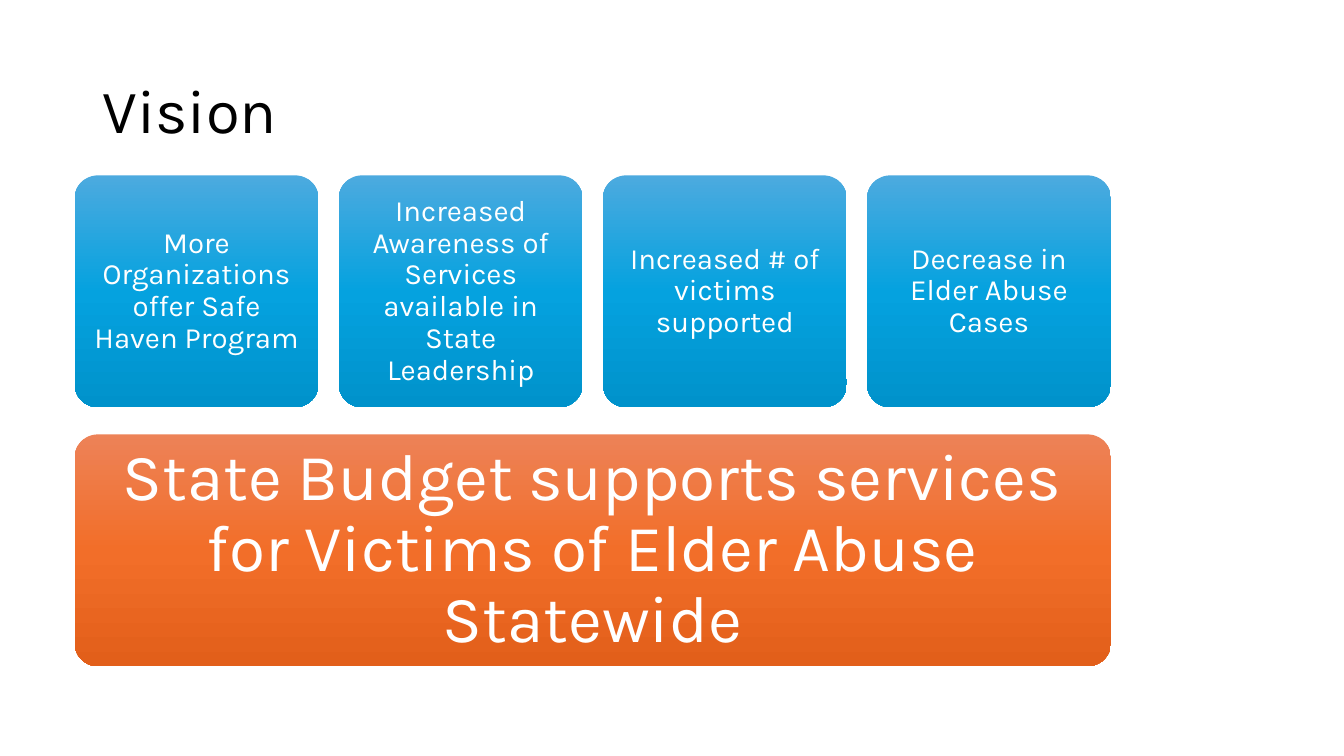
from copy import deepcopy

from pptx import Presentation
from pptx.dml.color import RGBColor
from pptx.enum.shapes import MSO_SHAPE as Shape
from pptx.enum.text import MSO_ANCHOR as Anchor, MSO_AUTO_SIZE as AutoSize, PP_ALIGN as Align
from pptx.util import Pt

BLACK = RGBColor(0x00, 0x00, 0x00)
WHITE = RGBColor(0xFF, 0xFF, 0xFF)
BLUES = (RGBColor(0x4C, 0xAA, 0xDF), RGBColor(0x05, 0xA2, 0xDF), RGBColor(0x00, 0x92, 0xCB))
ORANGES = (RGBColor(0xED, 0x82, 0x57), RGBColor(0xF2, 0x6E, 0x29), RGBColor(0xE2, 0x5F, 0x1A))

FONT = "Karla"
LEFT, WIDTH = 53.3, 740.2
GOAL_TOP, BUDGET_TOP = 125.3, 310.3
CARD_HEIGHT, GOAL_WIDTH = 165.6, 174.2

GOALS = (
    "More Organizations offer Safe Haven Program",
    "Increased Awareness of Services available in State Leadership",
    "Increased # of victims supported",
    "Decrease in Elder Abuse Cases",
)
BUDGET = "State Budget supports services for Victims of Elder Abuse Statewide"


def write(frame, text, size, color, align):
    frame.text = text
    frame.word_wrap = True
    frame.auto_size = AutoSize.NONE
    frame.vertical_anchor = Anchor.MIDDLE
    para = frame.paragraphs[0]
    para.alignment = align
    para.line_spacing = 0.9
    span = para.runs[0]
    span.font.name = FONT
    span.font.size = Pt(size)
    span.font.color.rgb = color


def add_title(page, text):
    title = page.shapes.title
    title.left, title.top = Pt(66), Pt(28.8)
    title.width, title.height = Pt(828), Pt(104.4)
    write(title.text_frame, text, 44, BLACK, Align.LEFT)


def shade(shape, colors):
    """Fill from top to bottom with three evenly spaced colours."""
    shape.fill.gradient()
    shape.fill.gradient_angle = 270
    first = shape.element.spPr.xpath(".//a:gs")[0]
    first.addnext(deepcopy(first))
    for index, (stop, color) in enumerate(zip(shape.fill.gradient_stops, colors)):
        stop.position = index / 2
        stop.color.rgb = color


def add_card(page, left, top, width, text, size, inset, colors):
    card = page.shapes.add_shape(
        Shape.ROUNDED_RECTANGLE, Pt(left), Pt(top), Pt(width), Pt(CARD_HEIGHT))
    card.adjustments[0] = 0.1
    card.shadow.inherit = False
    card.line.fill.background()
    shade(card, colors)
    frame = card.text_frame
    frame.margin_left = frame.margin_right = Pt(inset)
    frame.margin_top = frame.margin_bottom = Pt(inset)
    write(frame, text, size, WHITE, Align.CENTER)


def main():
    deck = Presentation()
    deck.slide_width, deck.slide_height = Pt(960), Pt(540)
    page = deck.slides.add_slide(deck.slide_layouts[5])

    add_title(page, "Vision")

    # Budget foundation
    add_card(page, LEFT, BUDGET_TOP, WIDTH, BUDGET, 47, 14.4, ORANGES)

    # Goals spread across the width of the foundation
    pitch = (WIDTH - GOAL_WIDTH) / (len(GOALS) - 1)
    for index, goal in enumerate(GOALS):
        add_card(page, LEFT + index * pitch, GOAL_TOP, GOAL_WIDTH, goal, 21, 6.5, BLUES)

    deck.save("out.pptx")


if __name__ == "__main__":
    main()
